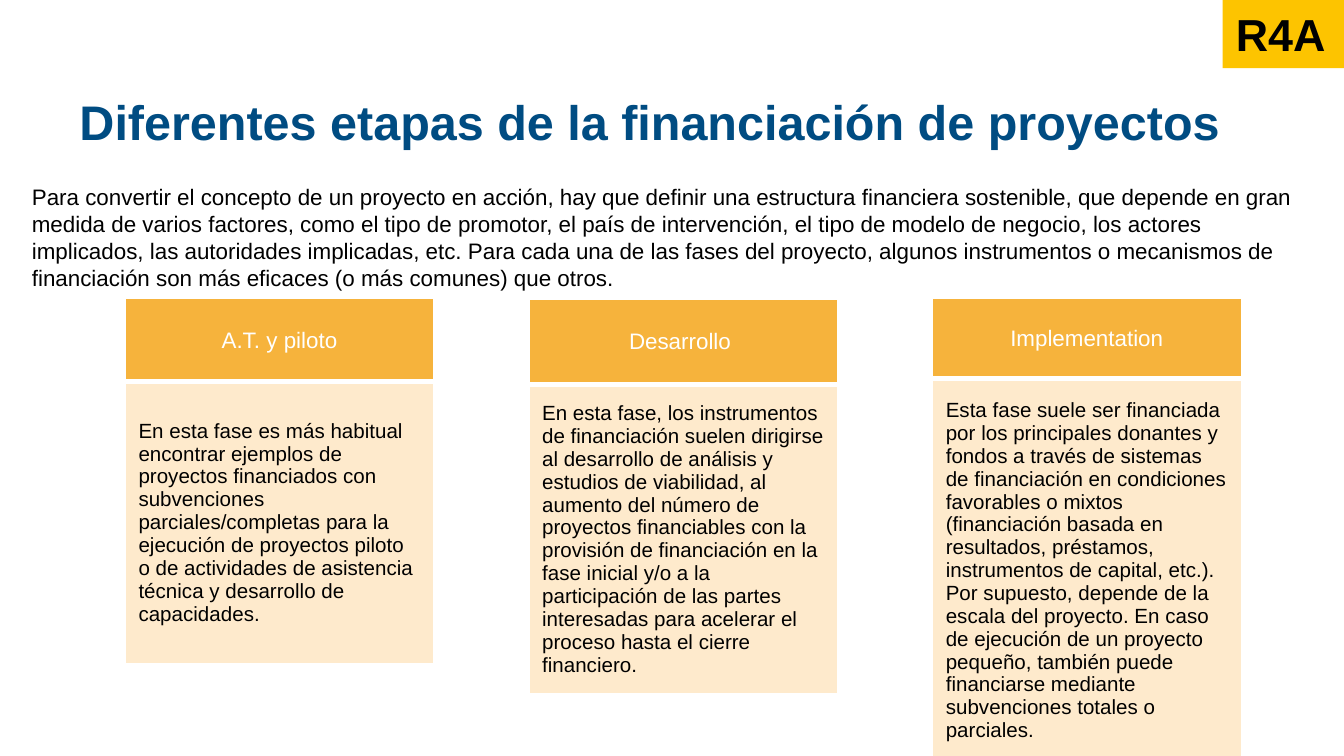
from lxml import etree
from pptx import Presentation
from pptx.dml.color import RGBColor
from pptx.enum.shapes import MSO_SHAPE
from pptx.enum.text import MSO_ANCHOR, PP_ALIGN
from pptx.oxml.ns import qn
from pptx.util import Pt

RECTANGLE = MSO_SHAPE.RECTANGLE
TOP, MIDDLE = MSO_ANCHOR.TOP, MSO_ANCHOR.MIDDLE
LEFT, CENTER = PP_ALIGN.LEFT, PP_ALIGN.CENTER

WHITE = RGBColor(0xFF, 0xFF, 0xFF)
BLACK = RGBColor(0, 0, 0)
NAVY = RGBColor(0x00, 0x4C, 0x82)
YELLOW = RGBColor(0xFD, 0xC4, 0x00)
ORANGE = RGBColor(0xF6, 0xB3, 0x3C)
CREAM = RGBColor(0xFE, 0xEA, 0xCC)

FONT = "Arial"
FIRST_PHASE_LEFT = 67
PHASE_PITCH = 216.25
PHASE_WIDTH = 165.5

TITLE = "Diferentes etapas de la financiación de proyectos"
INTRO = (
    "Para convertir el concepto de un proyecto en acción, hay que definir una "
    "estructura financiera sostenible, que depende en gran medida de varios "
    "factores, como el tipo de promotor, el país de intervención, el tipo de "
    "modelo de negocio, los actores implicados, las autoridades implicadas, etc. "
    "Para cada una de las fases del proyecto, algunos instrumentos o mecanismos "
    "de financiación son más eficaces (o más comunes) que otros."
)
# Heading, description, top, heading height, description height
PHASES = [
    ("A.T. y piloto",
     "En esta fase es más habitual encontrar ejemplos de proyectos financiados "
     "con subvenciones parciales/completas para la ejecución de proyectos piloto "
     "o de actividades de asistencia técnica y desarrollo de capacidades.",
     160, 44.5, 151),
    ("Desarrollo ",
     "En esta fase, los instrumentos de financiación suelen dirigirse al "
     "desarrollo de análisis y estudios de viabilidad, al aumento del número de "
     "proyectos financiables con la provisión de financiación en la fase inicial "
     "y/o a la participación de las partes interesadas para acelerar el proceso "
     "hasta el cierre financiero.",
     160.5, 45.5, 165.5),
    ("Implementation",
     "Esta fase suele ser financiada por los principales donantes y fondos a "
     "través de sistemas de financiación en condiciones favorables o mixtos "
     "(financiación basada en resultados, préstamos, instrumentos de capital, "
     "etc.). Por supuesto, depende de la escala del proyecto. En caso de "
     "ejecución de un proyecto pequeño, también puede financiarse mediante "
     "subvenciones totales o parciales.",
     160, 43, 205),
]


def write(frame, text, size, color, bold=False, align=LEFT):
    frame.text = text
    frame.word_wrap = True
    paragraph = frame.paragraphs[0]
    paragraph.alignment = align
    font = paragraph.runs[0].font
    font.name, font.size, font.bold = FONT, Pt(size), bold
    font.color.rgb = color
    return paragraph


def add_text(slide, left, top, width, height, text, size, color,
             bold=False, anchor=TOP):
    box = slide.shapes.add_textbox(Pt(left), Pt(top), Pt(width), Pt(height))
    box.text_frame.vertical_anchor = anchor
    return write(box.text_frame, text, size, color, bold)


def add_tag(slide, text):
    tag = slide.shapes.add_shape(RECTANGLE, Pt(655), Pt(0), Pt(66), Pt(36.5))
    tag.shadow.inherit = False
    tag.fill.solid()
    tag.fill.fore_color.rgb = YELLOW
    tag.line.fill.background()
    tag.text_frame.vertical_anchor = TOP
    write(tag.text_frame, text, 24, BLACK, bold=True)


def set_borders(cell, top, bottom):
    """Draw white cell borders; must run before the cell gets its fill."""
    properties = cell._tc.get_or_add_tcPr()
    for side, width in (("L", 1), ("R", 1), ("T", top), ("B", bottom)):
        line = etree.SubElement(properties, qn(f"a:ln{side}"), w=str(Pt(width)))
        fill = etree.SubElement(line, qn("a:solidFill"))
        etree.SubElement(fill, qn("a:srgbClr"), val=str(WHITE))


def fill_cell(cell, text, size, color, background, align, borders):
    set_borders(cell, *borders)
    cell.fill.solid()
    cell.fill.fore_color.rgb = background
    cell.vertical_anchor = MIDDLE
    write(cell.text_frame, text, size, color, align=align)


def add_phase(slide, left, heading, description, top, *row_heights):
    table = slide.shapes.add_table(
        2, 1, Pt(left), Pt(top), Pt(PHASE_WIDTH), Pt(sum(row_heights))).table
    for row, height in zip(table.rows, row_heights):
        row.height = Pt(height)
    fill_cell(table.cell(0, 0), heading, 12, WHITE, ORANGE, CENTER, (1, 3))
    fill_cell(table.cell(1, 0), description, 11, BLACK, CREAM, LEFT, (3, 1))


def main():
    presentation = Presentation()
    presentation.slide_width, presentation.slide_height = Pt(720), Pt(405)
    slide = presentation.slides.add_slide(presentation.slide_layouts[6])

    title = add_text(slide, 35.5, 45.5, 674.5, 42.5, TITLE, 26, NAVY,
                     bold=True, anchor=MIDDLE)
    title.line_spacing = 0.9
    add_tag(slide, "R4A")
    for index, phase in enumerate(PHASES):
        add_phase(slide, FIRST_PHASE_LEFT + index * PHASE_PITCH, *phase)
    add_text(slide, 10, 94.5, 700, 65.5, INTRO, 12, BLACK)

    presentation.save("out.pptx")


if __name__ == "__main__":
    main()
